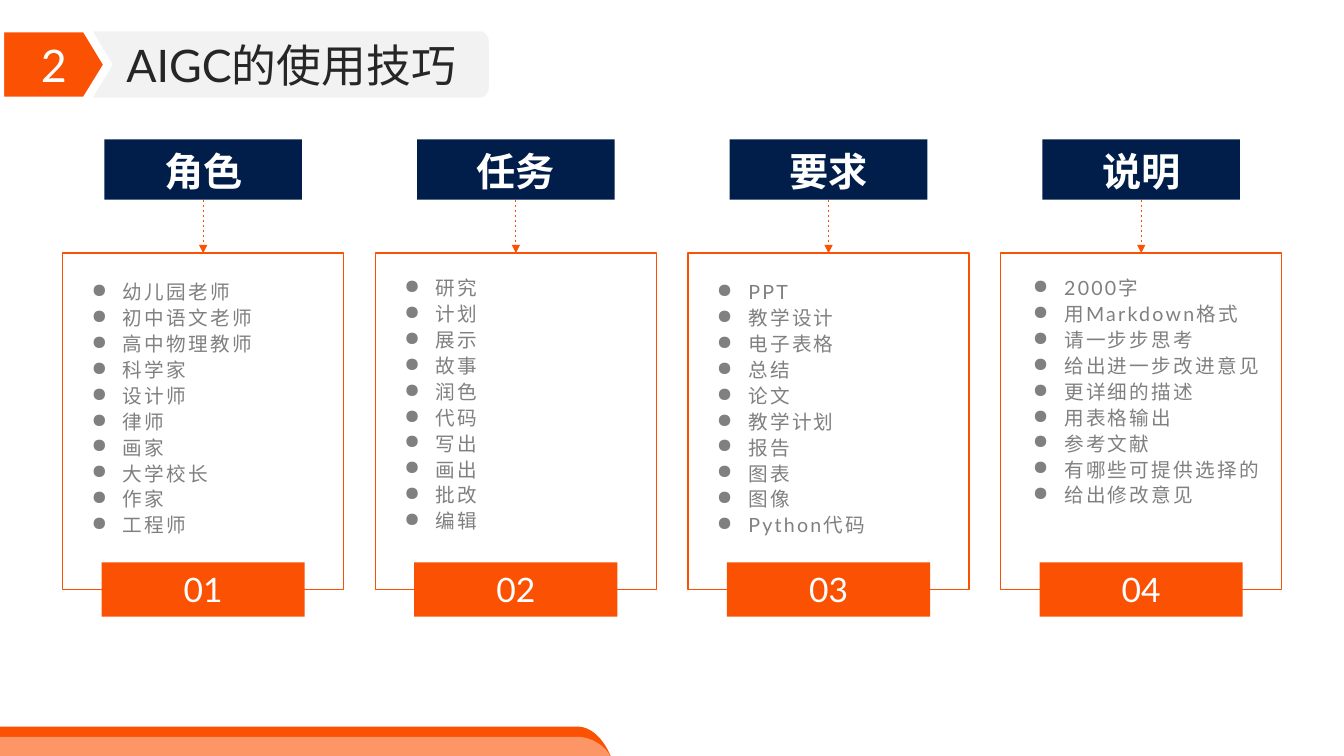
from dataclasses import dataclass

from lxml.etree import SubElement
from pptx import Presentation
from pptx.dml.color import RGBColor
from pptx.enum.dml import MSO_LINE
from pptx.enum.shapes import MSO_CONNECTOR, MSO_SHAPE
from pptx.enum.text import MSO_ANCHOR, PP_ALIGN
from pptx.oxml.ns import qn
from pptx.util import Cm, Pt


@dataclass(frozen=True)
class Theme:
    """Colours, font and type sizes of the slide."""
    orange: str = "FB5103"
    peach: str = "FD9667"
    navy: str = "011E4A"
    pale: str = "F2F2F2"
    white: str = "FFFFFF"
    ink: str = "262626"
    gray: str = "808080"
    font: str = "Lato"
    title: int = 32
    header: int = 28
    tag: int = 24
    body: int = 14


def curve(p0, p1, p2, p3, steps=16):
    """Return points along a cubic curve."""
    pts = []
    for i in range(steps + 1):
        t = i / steps
        u = 1 - t
        weights = (u ** 3, 3 * u * u * t, 3 * u * t * t, t ** 3)
        pts.append(tuple(sum(w * p[axis] for w, p in zip(weights, (p0, p1, p2, p3)))
                         for axis in (0, 1)))
    return pts


class Deck:
    """Draws themed elements on the current slide, with lengths in centimetres."""

    def __init__(self, prs, theme):
        """Add a blank slide to draw on."""
        self.theme = theme
        self.s = prs.slides.add_slide(prs.slide_layouts[6])

    def paint(self, sp, fill=None, line=None, width=1):
        """Set the fill and line of a shape."""
        sp.shadow.inherit = False
        if fill:
            sp.fill.solid()
            sp.fill.fore_color.rgb = RGBColor.from_string(fill)
        else:
            sp.fill.background()
        if line:
            sp.line.color.rgb = RGBColor.from_string(line)
            sp.line.width = Pt(width)
        else:
            sp.line.fill.background()
        return sp

    def run(self, p, text, size, color, bold=False, spacing=None):
        """Add one run of text to a paragraph."""
        r = p.add_run()
        r.text = text
        r.font.name = self.theme.font
        r.font.size = Pt(size)
        r.font.bold = bold
        r.font.color.rgb = RGBColor.from_string(color)
        rPr = r._r.get_or_add_rPr()
        rPr.set("lang", "zh-CN")
        if spacing:
            rPr.set("spc", str(spacing))
        SubElement(rPr, qn("a:ea")).set("typeface", self.theme.font)

    def label(self, sp, text, size, color, bold=False, top=0):
        """Centre one line of text in a shape."""
        tf = sp.text_frame
        tf.margin_left = tf.margin_right = tf.margin_bottom = 0
        tf.margin_top = Cm(top)
        tf.vertical_anchor = MSO_ANCHOR.MIDDLE
        p = tf.paragraphs[0]
        p.alignment = PP_ALIGN.CENTER
        self.run(p, text, size, color, bold)

    def rect(self, x, y, w, h, **style):
        """Add a rectangle."""
        sp = self.s.shapes.add_shape(MSO_SHAPE.RECTANGLE, Cm(x), Cm(y), Cm(w), Cm(h))
        return self.paint(sp, **style)

    def outline(self, points, **style):
        """Add a closed outline."""
        pts = [(Cm(x), Cm(y)) for x, y in points]
        builder = self.s.shapes.build_freeform(*pts[0])
        builder.add_line_segments(pts[1:], close=True)
        return self.paint(builder.convert_to_shape(), **style)

    def arrow(self, x, y1, y2):
        """Add a dashed arrow pointing down."""
        c = self.s.shapes.add_connector(MSO_CONNECTOR.STRAIGHT, Cm(x), Cm(y1), Cm(x), Cm(y2))
        c.line.color.rgb = RGBColor.from_string(self.theme.orange)
        c.line.width = Pt(0.5)
        c.line.dash_style = MSO_LINE.DASH
        SubElement(c.line._get_or_add_ln(), qn("a:tailEnd")).set("type", "triangle")
        SubElement(c._element.spPr, qn("a:effectLst"))

    def bullets(self, x, y, w, h, items):
        """Add a bulleted list."""
        tf = self.s.shapes.add_textbox(Cm(x), Cm(y), Cm(w), Cm(h)).text_frame
        tf.word_wrap = True
        for i, item in enumerate(items):
            p = tf.add_paragraph() if i else tf.paragraphs[0]
            p.line_spacing = 1.1
            pPr = p._p.get_or_add_pPr()
            pPr.set("marL", str(Cm(0.79)))
            pPr.set("indent", str(Cm(-0.79)))
            SubElement(pPr, qn("a:buChar")).set("char", "●")
            self.run(p, item, self.theme.body, self.theme.gray, spacing=160)

    def footer(self, top, fill):
        """Add a band along the bottom edge with a curved right end."""
        depth = 19.05 - top
        bend = curve((14.55, top), (14.88, top), (15.19, top + 0.37 * depth), (15.39, 19.05))
        self.outline([(0, top), *bend, (0, 19.05)], fill=fill)

    def heading(self, number, text):
        """Add the title bar and its number."""
        t = self.theme
        upper = curve((12.09, 0.79), (12.22, 0.79), (12.32, 0.91), (12.32, 1.07))
        lower = curve((12.32, 2.18), (12.32, 2.34), (12.22, 2.46), (12.09, 2.46))
        bar = self.outline([(2.36, 0.79), *upper, *lower, (2.36, 2.46)], fill=t.pale)
        self.label(bar, text, t.title, t.ink)
        flag = self.outline([(0, 0.71), (2.16, 0.71), (2.72, 1.63), (2.16, 2.54), (0, 2.54)],
                            fill=t.orange, line=t.white, width=6)
        self.label(flag, number, t.title, t.white)

    def column(self, center, number, header, items, list_left, list_top, list_width):
        """Add a header, an arrow, a framed list and a number tag."""
        t = self.theme
        head = self.rect(center - 2.49, 3.51, 4.98, 1.52, fill=t.navy)
        self.label(head, header, t.header, t.white, bold=True, top=0.08)
        self.rect(center - 3.54, 6.38, 7.08, 8.48, line=t.orange)
        tag = self.rect(center - 2.56, 14.17, 5.12, 1.37, fill=t.orange)
        self.label(tag, number, t.tag, t.white)
        self.arrow(center, 5.03, 6.38)
        self.bullets(center + list_left, list_top, list_width, 6.78, items)


COLUMNS = [
    ("角色", ["幼儿园老师", "初中语文老师", "高中物理教师", "科学家", "设计师",
            "律师", "画家", "大学校长", "作家", "工程师"], -3.06, 6.88, 6.12),
    ("任务", ["研究", "计划", "展示", "故事", "润色",
            "代码", "写出", "画出", "批改", "编辑"], -3.06, 6.78, 6.12),
    ("要求", ["PPT", "教学设计", "电子表格", "总结", "论文",
            "教学计划", "报告", "图表", "图像", "Python代码"], -3.06, 6.88, 6.12),
    ("说明", ["2000字", "用Markdown格式", "请一步步思考", "给出进一步改进意见", "更详细的描述",
            "用表格输出", "参考文献", "有哪些可提供选择的", "给出修改意见"], -2.98, 6.78, 6.5),
]


def main():
    """Build and save the slide."""
    prs = Presentation()
    prs.slide_width, prs.slide_height = Cm(33.87), Cm(19.05)
    theme = Theme()
    deck = Deck(prs, theme)
    deck.footer(18.31, theme.orange)
    deck.footer(18.57, theme.peach)
    deck.heading("2", "AIGC的使用技巧")
    for i, column in enumerate(COLUMNS):
        deck.column(5.12 + 7.88 * i, f"{i + 1:02}", *column)
    prs.save("out.pptx")


if __name__ == "__main__":
    main()
